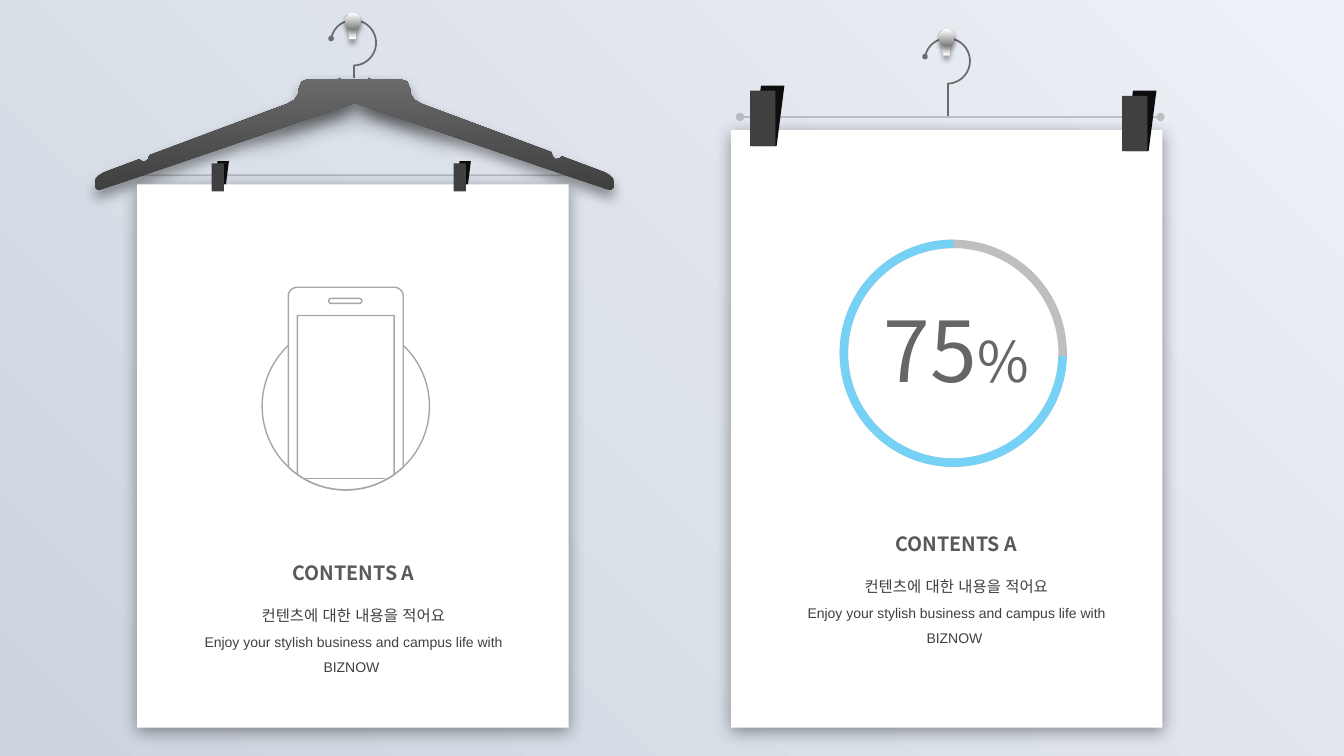
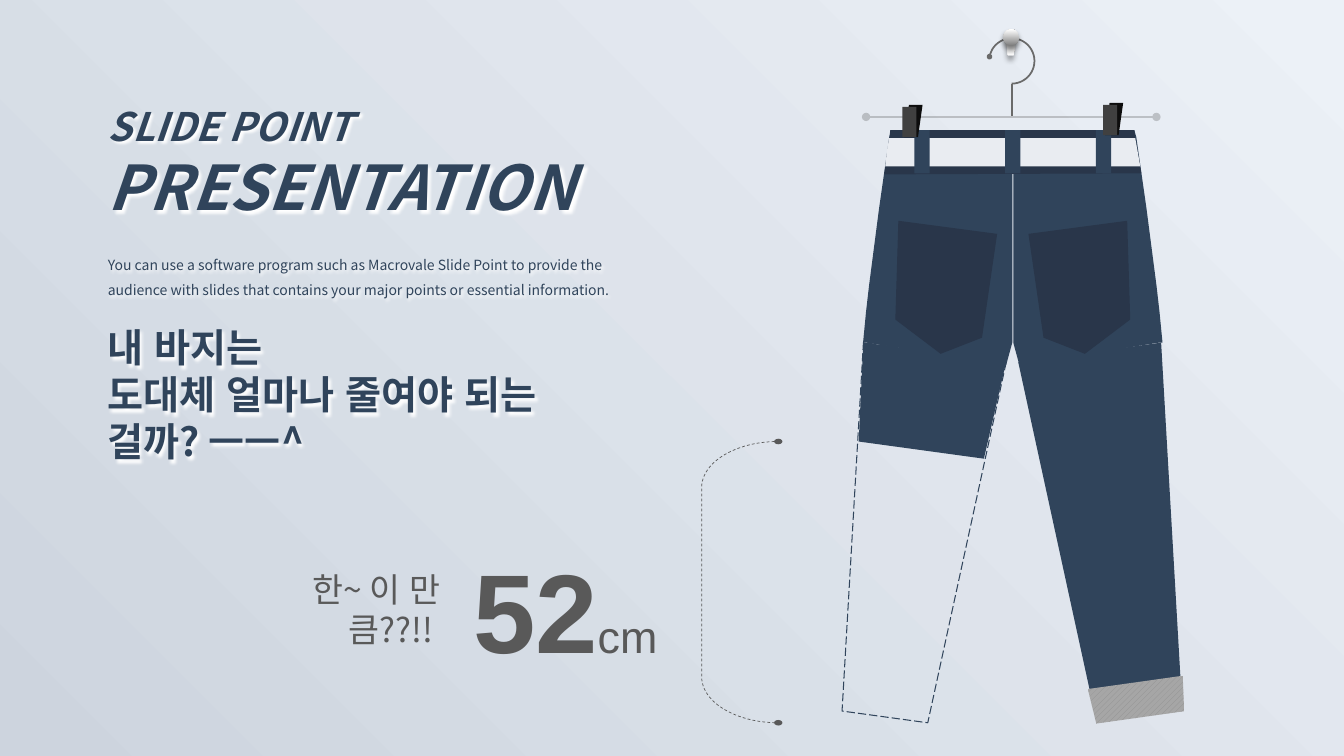
import math
from lxml import etree
from pptx import Presentation
from pptx.dml.color import RGBColor
from pptx.enum.dml import MSO_LINE, MSO_PATTERN
from pptx.enum.lang import MSO_LANGUAGE_ID
from pptx.enum.shapes import MSO_CONNECTOR, MSO_SHAPE
from pptx.enum.text import MSO_ANCHOR, MSO_AUTO_SIZE, PP_ALIGN
from pptx.oxml.ns import qn
from pptx.util import Inches, Pt

STRAIGHT = MSO_CONNECTOR.STRAIGHT
RECTANGLE = MSO_SHAPE.RECTANGLE
ROUNDED = MSO_SHAPE.ROUNDED_RECTANGLE
OVAL = MSO_SHAPE.OVAL
ARC = MSO_SHAPE.ARC
TRAPEZOID = MSO_SHAPE.TRAPEZOID
TRIANGLE = MSO_SHAPE.RIGHT_TRIANGLE
SLANTED = MSO_SHAPE.PARALLELOGRAM
BRACKET = MSO_SHAPE.RIGHT_BRACKET
DASH, LONG_DASH = MSO_LINE.DASH, MSO_LINE.LONG_DASH
KOREAN = MSO_LANGUAGE_ID.KOREAN
TOP, MIDDLE = MSO_ANCHOR.TOP, MSO_ANCHOR.MIDDLE
LEFT, CENTER, RIGHT = PP_ALIGN.LEFT, PP_ALIGN.CENTER, PP_ALIGN.RIGHT


class Theme:
    sky, haze = "ECF1F7", "CDD4DE"
    white, black = "FFFFFF", "000000"
    clip_back, clip_front = "0D0D0D", "404040"
    steel, bar, outline, ring = "6A6A6A", "404040", "A6A6A6", "BFBFBF"
    hanger = ("3F3F3F", "6A6A6A")
    knob = ("808080", "FFFFFF")
    progress, denim, pocket, belt, stitch = "76D1F6", "30445B", "29364A", "E9ECF1", "909090"
    dotted = "595959"
    noto, arial = "Noto Sans CJK KR", "Arial"
    heading = (14, noto, "595959", True, False)
    korean = (11, arial, "404040", False, False)
    english = (10, arial, "404040", False, False)
    percent = (60, noto, "666666", False, False)
    percent_sign = (40, noto, "666666", False, False)
    title_small = (28, noto, denim, True, True)
    title_large = (44, noto, denim, True, True)
    lead = (10, noto, denim, False, False)
    question = (28, noto, denim, True, False)
    number = (80, arial, "595959", True, False)
    unit = (32, arial, "595959", False, False)
    remark = (24, noto, "595959", False, False)


COLUMNS, ROWS, FINE = 13.33, 7.5, 1000
deck = Presentation()
deck.slide_width, deck.slide_height = Inches(COLUMNS), Inches(ROWS)
COLUMN, ROW = deck.slide_width / COLUMNS, deck.slide_height / ROWS

backdrop = deck.slide_master.background.fill
backdrop.gradient()
backdrop.gradient_angle = 225
for stop, color in zip(backdrop.gradient_stops, (Theme.sky, Theme.haze)):
    stop.color.rgb = RGBColor.from_string(color)


def shade(shape, color, alpha, blur, distance, angle):
    shape.shadow.inherit = False
    effects = shape.element.spPr.find(qn("a:effectLst"))
    shadow = etree.SubElement(effects, qn("a:outerShdw"), blurRad=str(Pt(blur)), dist=str(Pt(distance)),
                              dir=str(angle * 60000), algn="ctr", rotWithShape="0")
    tint = etree.SubElement(shadow, qn("a:srgbClr"), val=color)
    etree.SubElement(tint, qn("a:alpha"), val=str(alpha * 1000))


def draw(page, kind, at, fill=None, line=None, width=1, dash=None, ends="", end_size=("med", "med"),
         flip="", turn=0, adjust=(), shadow=None, alpha=100):
    if kind is None:
        points = [(round(x * FINE), round(y * FINE)) for x, y in at]
        builder = page.shapes.build_freeform(*points[0], scale=(COLUMN / FINE, ROW / FINE))
        builder.add_line_segments(points[1:])
        shape = builder.convert_to_shape()
    else:
        frame = [round(value * unit) for value, unit in zip(at, (COLUMN, ROW) * 2)]
        if isinstance(kind, MSO_CONNECTOR):
            shape = page.shapes.add_connector(kind, *frame)
        else:
            shape = page.shapes.add_shape(kind, *frame)
            for index, value in enumerate(adjust):
                shape.adjustments[index] = value
            shape.rotation = turn
            for axis in flip:
                shape.element.spPr.get_or_add_xfrm().set("flip" + axis, "1")
    properties = shape.element.spPr
    if line:
        shape.line.color.rgb = RGBColor.from_string(line)
        shape.line.width = Pt(width)
        if dash:
            shape.line.dash_style = dash
        stroke = properties.find(qn("a:ln"))
        if alpha < 100:
            etree.SubElement(stroke.find(".//" + qn("a:srgbClr")), qn("a:alpha"), val=str(alpha * 1000))
        for end in ends.split():
            etree.SubElement(stroke, qn("a:" + end), type="oval", w=end_size[0], len=end_size[1])
    else:
        shape.line.fill.background()
    if not hasattr(shape, "fill"):
        etree.SubElement(properties, qn("a:effectLst"))
        return shape
    shape.shadow.inherit = False
    if fill is None:
        shape.fill.background()
    elif isinstance(fill, tuple):
        shape.fill.gradient()
        shape.fill.gradient_angle = 90
        for stop, color in zip(shape.fill.gradient_stops, fill):
            stop.color.rgb = RGBColor.from_string(color)
    else:
        shape.fill.solid()
        shape.fill.fore_color.rgb = RGBColor.from_string(fill)
    if shadow:
        shade(shape, Theme.black, 40, *shadow)
    return shape


cards = deck.slides.add_slide(deck.slide_layouts[3])
trousers = deck.slides.add_slide(deck.slide_layouts[1])
cards.shapes.title.element.getparent().remove(cards.shapes.title.element)

for left, turn, flip in ((3.51, 30, "V"), (2.4, 330, "HV")):
    draw(cards, TRIANGLE, (left, 1.03, 1.12, 0.29), Theme.steel, turn=turn, flip=flip, shadow=(15, 10, 80))

for page, middle, top, stem_end, knob_top, bar_left, bar_right, bar_row, bar_ends in (
    (cards, 3.51, 0.2, 0.77, 0.13, 1.4, 5.76, 1.74, ""),
    (cards, 9.4, 0.38, 1.15, 0.29, 7.34, 11.51, 1.16, "headEnd tailEnd"),
    (trousers, 10.04, 0.38, 1.15, 0.29, 8.59, 11.47, 1.16, "headEnd tailEnd"),
):
    draw(page, ARC, (middle - 0.23, top, 0.45, 0.45), line=Theme.steel, width=1.25, ends="headEnd",
         end_size=("sm", "sm"), adjust=(114.57, 54.14))
    draw(page, STRAIGHT, (middle, top + 0.45, middle, stem_end), line=Theme.steel, width=1.25)
    draw(page, STRAIGHT, (bar_left, bar_row, bar_right, bar_row), line=Theme.bar, width=1.25,
         ends=bar_ends, alpha=25)
    draw(page, TRAPEZOID, (middle - 0.07, knob_top + 0.02, 0.11, 0.24), Theme.knob, flip="V", shadow=(4, 3, 90))
    draw(page, OVAL, (middle - 0.09, knob_top, 0.16, 0.16), Theme.knob, shadow=(4, 3, 90))

neck = [(3.96, 0.78), (4.04, 0.81), (4.07, 0.89), (4.07, 0.93), (4.11, 0.99), (4.18, 1.03)]
tip = [(6, 1.71), (6.05, 1.74), (6.08, 1.77), (6.09, 1.81), (6.09, 1.86), (6.06, 1.89), (6.02, 1.88)]
right_notch = [(5.47, 1.51), (5.48, 1.55), (5.51, 1.58), (5.55, 1.57), (5.57, 1.55)]
left_notch = [(1.38, 1.58), (1.41, 1.6), (1.44, 1.6), (1.47, 1.58), (1.48, 1.54)]
left_neck, left_tip = [[(7.03 - x, y) for x, y in reversed(half)] for half in (neck, tip)]
hanger = neck + right_notch + tip + [(3.52, 1.02)] + left_tip + left_notch + left_neck
draw(cards, None, hanger, Theme.hanger, shadow=(9, 5, 90))

small_clips = (2.1, 4.5)
for left in small_clips:
    draw(cards, SLANTED, (left + 0.02, 1.6, 0.15, 0.3), Theme.clip_back)
for left, top in ((1.36, 1.83), (7.25, 1.29)):
    draw(cards, RECTANGLE, (left, top, 4.28, 7.22 - top), Theme.white, shadow=(12, 3, 90))
for left in small_clips:
    draw(cards, RECTANGLE, (left, 1.62, 0.12, 0.28), Theme.clip_front)

center, middle, radius = 3.43, 4.03, 0.83
draw(cards, OVAL, (center - radius, middle - radius, 2 * radius, 2 * radius), Theme.white, Theme.outline)
for half, top, corner in ((0.57, 2.85, 0.09), (0.48, 3.13, 0)):
    arc = [(center + half * step / 12, middle + math.sqrt(radius ** 2 - (half * step / 12) ** 2))
           for step in range(12, -13, -1)]
    turns = [math.radians(10 * step) for step in range(10)]
    right_corner = [(half - corner * (1 - math.sin(turn)), top + corner * (1 - math.cos(turn))) for turn in turns]
    edge = [(center - x, y) for x, y in reversed(right_corner)] + [(center + x, y) for x, y in right_corner]
    draw(cards, None, edge + arc, Theme.white, Theme.outline)
draw(cards, ROUNDED, (3.26, 2.96, 0.33, 0.05), Theme.white, Theme.outline, adjust=(0.5,))
draw(cards, STRAIGHT, (3.03, 4.75, 3.82, 4.75), line=Theme.outline)

dial = (8.37, 2.42, 2.17, 2.17)
draw(cards, OVAL, dial, line=Theme.ring, width=6)
draw(cards, ARC, dial, line=Theme.progress, width=6, adjust=(0.97, 162.13))

draw(trousers, TRAPEZOID, (8.49, 3.49, 1.43, 0.98), Theme.denim, flip="HV", turn=7.8, adjust=(0.09,))
draw(trousers, TRAPEZOID, (8.31, 3.48, 1.43, 3.65), line=Theme.denim, width=0.75, dash=LONG_DASH,
     flip="HV", turn=7.8, adjust=(0.2,))
draw(trousers, TRAPEZOID, (10.34, 3.48, 1.43, 3.64), Theme.denim, flip="V", turn=352.2, adjust=(0.2,))
seat = [(10.05, 1.29), (10.05, 3.4), (10.11, 3.62), (11.49, 3.4), (11.53, 3.4), (11.5, 3.09),
        (11.47, 2.83), (11.37, 2.06), (11.27, 1.36), (11.25, 1.29)]
back_pocket = [(11.18, 2.19), (11.21, 3.17), (10.76, 3.51), (10.35, 3.35), (10.2, 2.32)]
for points, color in ((seat, Theme.denim), (back_pocket, Theme.pocket)):
    draw(trousers, None, points, color)
    draw(trousers, None, [(20.09 - x, y) for x, y in points], color)
waist = [(8.83, 1.29), (11.25, 1.29), (11.26, 1.37), (11.32, 1.72), (8.77, 1.73), (8.82, 1.38)]
band = [(8.82, 1.37), (11.26, 1.37), (11.28, 1.48), (11.31, 1.65), (8.78, 1.65), (8.8, 1.48)]
draw(trousers, None, waist, Theme.pocket)
draw(trousers, None, band, Theme.belt)
for step in range(3):
    draw(trousers, RECTANGLE, (9.07 + 0.9 * step, 1.29, 0.15, 0.43), Theme.denim)
cuff = draw(trousers, TRAPEZOID, (10.81, 6.77, 0.95, 0.35), Theme.outline, flip="HV", turn=352, adjust=(0.1,))
cuff.fill.patterned()
cuff.fill.pattern = MSO_PATTERN.WIDE_UPWARD_DIAGONAL
cuff.fill.fore_color.rgb = RGBColor.from_string(Theme.stitch)
cuff.fill.back_color.rgb = RGBColor.from_string(Theme.outline)
draw(trousers, BRACKET, (6.96, 4.38, 0.76, 2.79), line=Theme.dotted, width=0.5, dash=DASH,
     ends="headEnd tailEnd", end_size=("sm", "med"), flip="H", adjust=(0.6,))

for page, left, top, width, height, shift, lift in (
    (cards, 7.44, 0.9, 0.25, 0.55, 0.03, 0.05),
    (cards, 11.13, 0.95, 0.25, 0.55, 0.03, 0.05),
    (trousers, 8.95, 1.06, 0.14, 0.3, 0.02, 0.02),
    (trousers, 10.94, 1.04, 0.14, 0.3, 0.02, 0.02),
):
    draw(page, SLANTED, (left + shift, top - lift, width + 2 * shift, height + lift), Theme.clip_back)
    draw(page, RECTANGLE, (left, top, width, height), Theme.clip_front)

caption = [
    (1.5, 0, [("CONTENTS A", Theme.heading)]),
    (1.5, 9, [("컨텐츠에 대한 내용을 적어요", Theme.korean)]),
    (1.5, 0, [("Enjoy your stylish business and campus life with BIZNOW ", Theme.english)]),
]
headline = [(1, 0, [("SLIDE POINT ", Theme.title_small), ("PRESENTATION", Theme.title_large)])]
story = [
    (1.5, 0, [("You can use a software program such as Macrovale Slide Point to provide the audience "
               "with slides that contains your major points or essential information.", Theme.lead)]),
    (1, 18, [("내 바지는", Theme.question)]),
    (1, 0, [("도대체 얼마나 줄여야 되는 걸까? ㅡㅡ^", Theme.question)]),
]
share = [(1, 0, [("75", Theme.percent), ("%", Theme.percent_sign)])]
length = [(1, 0, [("52", Theme.number), ("cm", Theme.unit)])]
remark = [(1, 0, [("한~ 이 만큼??!! ", Theme.remark)])]

for page, slot, at, anchor, align, glow, paragraphs in (
    (cards, 1, (1.86, 5.4, 3.29, 1.36), TOP, CENTER, False, caption),
    (cards, 2, (7.84, 5.11, 3.29, 1.36), TOP, CENTER, False, caption),
    (cards, None, (8.58, 2.91, 1.81, 1.11), TOP, CENTER, False, share),
    (trousers, 0, (0.97, 0.96, 5.42, 1.3), TOP, LEFT, True, headline),
    (trousers, 1, (0.97, 2.41, 5.22, 2.2), TOP, LEFT, True, story),
    (trousers, None, (4.53, 5.13, 2.09, 1.82), MIDDLE, RIGHT, False, length),
    (trousers, None, (2.38, 5.59, 2.09, 0.9), TOP, RIGHT, False, remark),
):
    frame = [round(value * unit) for value, unit in zip(at, (COLUMN, ROW) * 2)]
    if slot is None:
        box = page.shapes.add_textbox(*frame)
    else:
        box = page.placeholders[slot]
        box.left, box.top, box.width, box.height = frame
        box.element.getparent().append(box.element)
    if glow:
        shade(box, Theme.white, 100, 2, 2, 45)
    text = box.text_frame
    text.word_wrap = True
    text.auto_size = MSO_AUTO_SIZE.NONE
    text.vertical_anchor = anchor
    for index, (spacing, before, spans) in enumerate(paragraphs):
        para = text.add_paragraph() if index else text.paragraphs[0]
        para.alignment = align
        para.line_spacing = spacing
        para.space_before = Pt(before)
        layout = para._p.get_or_add_pPr()
        layout.set("marL", "0")
        layout.set("indent", "0")
        etree.SubElement(layout, qn("a:buNone"))
        for words, (size, font, color, bold, italic) in spans:
            span = para.add_run()
            span.text = words
            span.font.size, span.font.name = Pt(size), font
            span.font.bold, span.font.italic = bold, italic
            span.font.color.rgb = RGBColor.from_string(color)
            span.font.language_id = KOREAN
            etree.SubElement(span.font._element, qn("a:ea"), typeface=Theme.noto)

deck.save("out.pptx")
